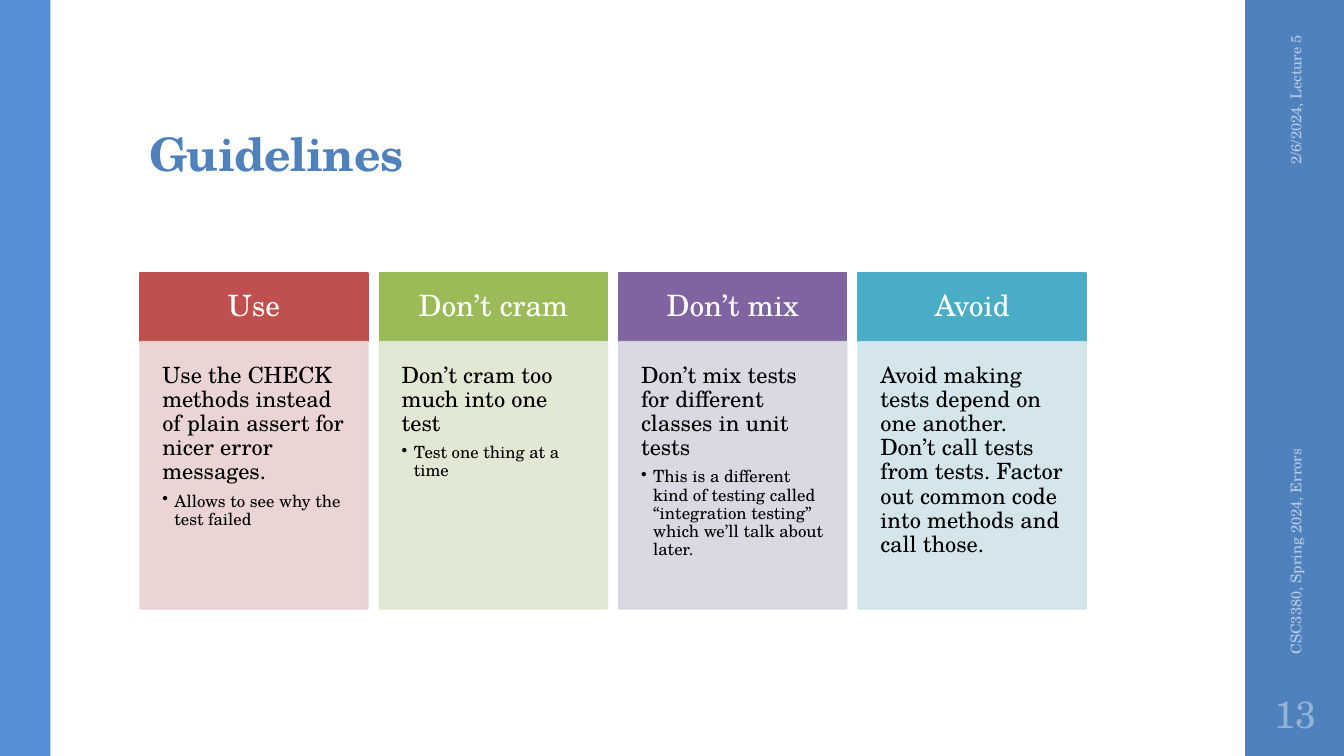
import pptx
import pptx.util
import pptx.dml.color
import pptx.enum.shapes
import pptx.enum.text
import pptx.oxml.ns
from lxml import etree

Inches = pptx.util.Inches
Pt = pptx.util.Pt
ALIGN = pptx.enum.text.PP_ALIGN
ANCHOR = pptx.enum.text.MSO_ANCHOR
qn = pptx.oxml.ns.qn

FONT = "TeX Gyre Schola"
HEX = {
    "bar": "4F81BD", "edge": "558ED5", "white": "FFFFFF", "black": "000000",
    "note": "B9CDE5", "number": "95B3D7",
    "red": "C0504D", "pink": "E8D0D0",
    "green": "9BBB59", "mint": "DEE7D1",
    "purple": "8064A2", "lilac": "D8D3E0",
    "teal": "4BACC6", "ice": "D0E3EA",
}

# Heading, head colour, body colour, main text, bullet
CARDS = [
    ("Use", "red", "pink",
     "Use the CHECK methods instead of plain assert for nicer error messages.",
     "Allows to see why the test failed"),
    ("Don’t cram", "green", "mint",
     "Don’t cram too much into one test",
     "Test one thing at a time"),
    ("Don’t mix", "purple", "lilac",
     "Don’t mix tests for different classes in unit tests",
     "This is a different kind of testing called “integration testing” "
     "which we’ll talk about later."),
    ("Avoid", "teal", "ice",
     "Avoid making tests depend on one another. Don’t call tests from tests. "
     "Factor out common code into methods and call those.",
     None),
]


def paint(name):
    return pptx.dml.color.RGBColor.from_string(HEX[name])


def fade(shape, share):
    """Set the opacity of fill and outline, in percent."""
    for tint in shape._element.spPr.iter(qn("a:srgbClr")):
        etree.SubElement(tint, qn("a:alpha")).set("val", str(share * 1000))


def add_block(slide, box, tint, edge=False):
    shape = slide.shapes.add_shape(
        pptx.enum.shapes.MSO_SHAPE.RECTANGLE, *map(Inches, box))
    shape.shadow.inherit = False
    shape.fill.solid()
    shape.fill.fore_color.rgb = paint(tint)
    if edge:
        shape.line.color.rgb = paint(tint)
        shape.line.width = Pt(1.1)
    else:
        shape.line.fill.background()
    return shape


def set_frame(shape, pads, anchor):
    frame = shape.text_frame
    frame.word_wrap = True
    frame.vertical_anchor = anchor
    (frame.margin_left, frame.margin_top,
     frame.margin_right, frame.margin_bottom) = map(Inches, pads)
    return frame


def add_run(para, text, size, tint, align=ALIGN.LEFT, bold=False):
    para.alignment = align
    run = para.add_run()
    run.text = text
    run.font.name = FONT
    run.font.size = Pt(size)
    run.font.bold = bold
    run.font.color.rgb = paint(tint)
    return run


def add_label(slide, box, text, size, tint, align=ALIGN.LEFT, turn=0,
              pads=(0.1, 0.05, 0.1, 0.05), anchor=ANCHOR.MIDDLE, bold=False):
    shape = slide.shapes.add_textbox(*map(Inches, box))
    shape.rotation = turn
    para = set_frame(shape, pads, anchor).paragraphs[0]
    return para, add_run(para, text, size, tint, align, bold)


def add_bullet(para):
    props = para._p.get_or_add_pPr()
    props.set("marL", str(Inches(0.12)))
    props.set("indent", str(Inches(-0.12)))
    etree.SubElement(props, qn("a:buChar")).set("char", "•")


def add_card(slide, left, card):
    title, dark, pale, text, point = card
    # Heading
    head = add_block(slide, (left, 2.71, 2.26, 0.68), dark, edge=True)
    para = set_frame(head, [0.18] * 4, ANCHOR.MIDDLE).paragraphs[0]
    para.line_spacing = 0.9
    add_run(para, title, 21, "white", ALIGN.CENTER)

    # Body
    body = add_block(slide, (left, 3.39, 2.26, 2.65), pale, edge=True)
    fade(body, 90)
    frame = set_frame(body, [0.22] * 4, ANCHOR.TOP)
    para = frame.paragraphs[0]
    para.line_spacing = 0.9
    para.space_after = Pt(5.6)
    add_run(para, text, 16, "black")
    if point:
        para = frame.add_paragraph()
        para.level = 1
        add_bullet(para)
        para.line_spacing = 0.9
        add_run(para, point, 12, "black")


def main():
    deck = pptx.Presentation()
    deck.slide_width = Inches(13.33)
    deck.slide_height = Inches(7.5)
    slide = deck.slides.add_slide(deck.slide_layouts[6])

    # Side bars
    add_block(slide, (12.35, 0, 0.98, 7.5), "bar")
    add_block(slide, (0, 0, 0.5, 7.5), "edge")

    # Title
    para, run = add_label(slide, (1.38, 0.32, 10.6, 1.53), "Guidelines", 33,
                          "bar", pads=(0.1, 0.03, 0.1, 0.05),
                          anchor=ANCHOR.BOTTOM, bold=True)
    para.line_spacing = 0.9
    run._r.get_or_add_rPr().set("spc", "-40")

    # Cards
    for rank, card in enumerate(CARDS):
        add_card(slide, 1.39 + rank * 2.374, card)

    # Date, footer and slide number
    add_label(slide, (11.81, 1.09, 2.08, 0.4), "2/6/2024, Lecture 5",
              10.5, "note", ALIGN.RIGHT, turn=270)
    add_label(slide, (10.89, 4.43, 3.92, 0.4), "CSC3380, Spring 2024, Errors",
              10.5, "note", turn=270)
    add_label(slide, (12.35, 6.75, 1, 0.65), "13", 27, "number",
              ALIGN.CENTER, pads=[0.05] * 4)

    deck.save("out.pptx")


if __name__ == "__main__":
    main()
